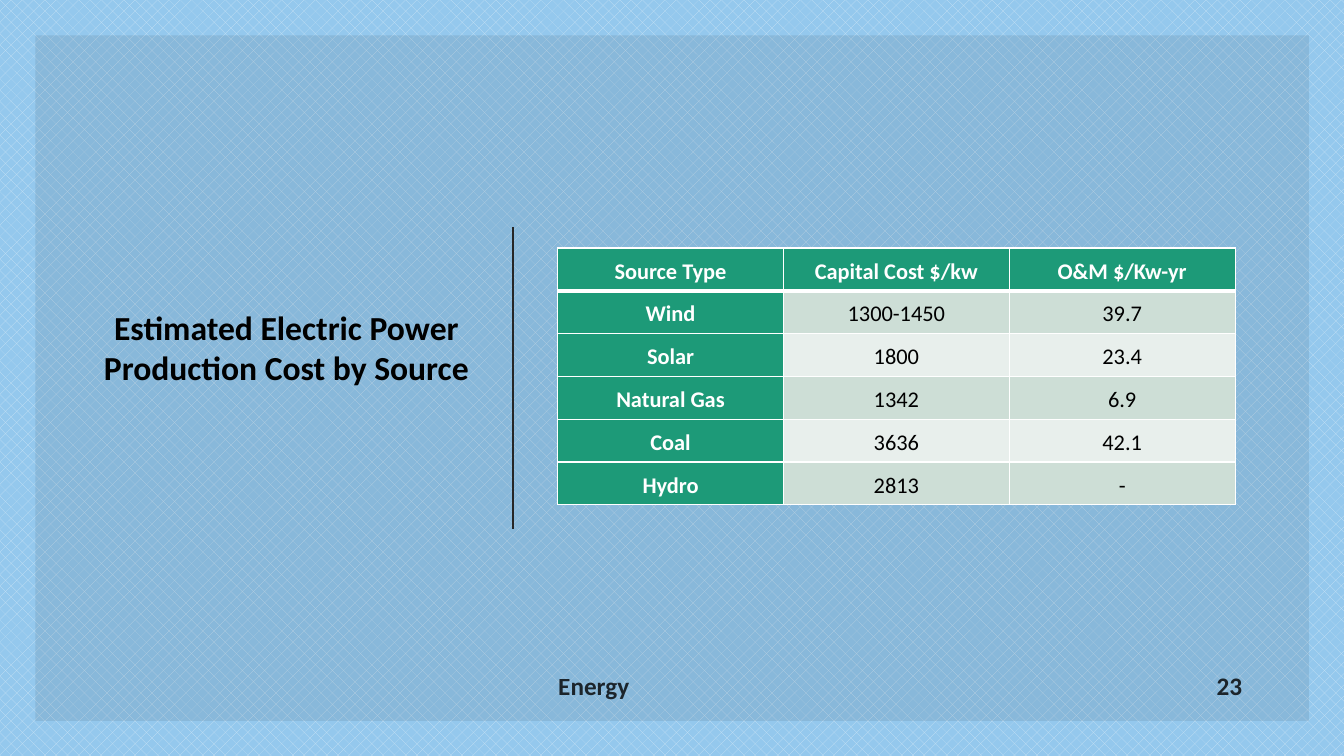
from dataclasses import dataclass

from lxml import etree
from pptx import Presentation
from pptx.dml.color import RGBColor
from pptx.enum.dml import MSO_PATTERN
from pptx.enum.shapes import MSO_CONNECTOR, MSO_SHAPE
from pptx.enum.text import MSO_ANCHOR, MSO_AUTO_SIZE, PP_ALIGN
from pptx.oxml.ns import qn
from pptx.util import Inches, Pt

LEFT, MID, RIGHT = PP_ALIGN.LEFT, PP_ALIGN.CENTER, PP_ALIGN.RIGHT
MIDDLE = MSO_ANCHOR.MIDDLE
GROW = MSO_AUTO_SIZE.SHAPE_TO_FIT_TEXT
RECT = MSO_SHAPE.RECTANGLE
STRAIGHT = MSO_CONNECTOR.STRAIGHT
DOTS = MSO_PATTERN.PERCENT_25
WIDE, HIGH = Inches(13.33), Inches(7.5)
COSTS = [
    ("Source Type", "Capital Cost $/kw", "O&M $/Kw-yr"),
    ("Wind", "1300-1450", "39.7"),
    ("Solar", "1800", "23.4"),
    ("Natural Gas", "1342", "6.9"),
    ("Coal", "3636", "42.1"),
    ("Hydro", "2813", "-"),
]


@dataclass(frozen=True)
class Theme:
    """Hold the colours, font and type sizes."""

    font: str = "Calibri"
    ink: str = "000000"
    pale: str = "FFFFFF"
    rule: str = "262626"
    head: str = "1D9A78"
    bands: tuple = ("E8EFEC", "CDDED6")
    dots: str = "CAE4F6"
    sky: str = "94C8ED"
    title: int = 24
    foot: int = 18
    cell: int = 16


LOOK = Theme()


def rgb(code):
    """Turn a hex code into a colour."""
    return RGBColor.from_string(code)


def span(x, y, w, h):
    """Turn percentages of the slide into lengths."""
    return [round(part * full / 100) for part, full in zip((x, y, w, h), (WIDE, HIGH) * 2)]


def put(thing, values):
    """Set attributes from a dict."""
    for name, value in values.items():
        setattr(thing, name, value)


def fade(fill, share):
    """Set the opacity of a solid fill in percent."""
    color = fill._xPr.find(qn("a:solidFill"))[0]
    etree.SubElement(color, qn("a:alpha"), val=str(share * 1000))


def write(frame, text, size, color, bold, align, **para):
    """Write one styled paragraph into a text frame."""
    frame.text = text
    line = frame.paragraphs[0]
    put(line, {"alignment": align, **para})
    font = line.runs[0].font
    put(font, {"name": LOOK.font, "size": Pt(size), "bold": bold})
    font.fill.solid()
    font.fill.fore_color.rgb = rgb(color)
    return font


def paint(slide):
    """Fill the background with its pattern."""
    fill = slide.background.fill
    fill.patterned()
    fill.pattern = DOTS
    fill.fore_color.rgb = rgb(LOOK.dots)
    fill.back_color.rgb = rgb(LOOK.sky)


def panel(slide, area):
    """Add the tinted panel."""
    shape = slide.shapes.add_shape(RECT, *area)
    shape.shadow.inherit = False
    shape.fill.solid()
    shape.fill.fore_color.rgb = rgb(LOOK.ink)
    fade(shape.fill, 8)
    shape.line.fill.background()


def rule(slide, x, top, end):
    """Add an upright line."""
    line = slide.shapes.add_connector(STRAIGHT, *span(x, top, x, end))
    line.line.color.rgb = rgb(LOOK.rule)
    line.line.width = Pt(1.5)
    etree.SubElement(line._element.spPr, qn("a:effectLst"))


def head(slide, text, area):
    """Place the title in front of the panel."""
    title = slide.shapes.title
    put(title, dict(zip(("left", "top", "width", "height"), area)))
    write(title.text_frame, text, LOOK.title, LOOK.ink, True, MID)
    put(title.text_frame, {"word_wrap": True, "vertical_anchor": MIDDLE, "auto_size": GROW})
    slide.shapes._spTree.append(title._element)


def foot(slide, text, area, align):
    """Add a footer text."""
    frame = slide.shapes.add_textbox(*area).text_frame
    put(frame, {"word_wrap": True, "vertical_anchor": MIDDLE})
    font = write(frame, text, LOOK.foot, LOOK.ink, True, align, space_after=Pt(6))
    fade(font.fill, 80)


def edge(cell, sides):
    """Draw the cell borders, given side and points."""
    props = cell._tc.get_or_add_tcPr()
    for spot, (side, width) in enumerate(sides.items()):
        line = etree.Element(qn("a:ln" + side), w=str(Pt(width)))
        fill = etree.SubElement(line, qn("a:solidFill"))
        etree.SubElement(fill, qn("a:srgbClr"), val=LOOK.pale)
        props.insert(spot, line)


def grid(slide, rows, area):
    """Add the cost table with its header row and column."""
    table = slide.shapes.add_table(len(rows), len(rows[0]), *area).table
    put(table, {"first_col": True, "horz_banding": False})
    for row in table.rows:
        row.height = area[3] // len(rows)
    pad = Inches(0.07)
    style = {"vertical_anchor": MIDDLE, "margin_left": pad, "margin_right": pad,
             "margin_top": 0, "margin_bottom": 0}
    for r, row in enumerate(rows):
        for c, text in enumerate(row):
            cell = table.cell(r, c)
            lead = r == 0 or c == 0
            put(cell, style)
            cell.fill.solid()
            cell.fill.fore_color.rgb = rgb(LOOK.head if lead else LOOK.bands[r % 2])
            color = LOOK.pale if lead else LOOK.ink
            write(cell.text_frame, text, LOOK.cell, color, lead, MID, line_spacing=1.15)
            edge(cell, {"L": 1, "R": 1, "T": 3 if r == 1 else 1, "B": 3 if r == 0 else 1})


def main():
    """Build and save the slide."""
    deck = Presentation()
    put(deck, {"slide_width": WIDE, "slide_height": HIGH})
    slide = deck.slides.add_slide(deck.slide_layouts[5])
    paint(slide)
    panel(slide, span(2.63, 4.67, 94.75, 90.67))
    rule(slide, 38.18, 30, 70)
    foot(slide, "Energy", span(40.8, 88, 43.14, 5.33), LEFT)
    foot(slide, "23", span(86.72, 88, 6.45, 5.33), RIGHT)
    head(slide, "Estimated Electric Power Production Cost by Source",
         span(6.83, 39.87, 28.96, 12.13))
    grid(slide, COSTS, span(41.49, 32.8, 50.41, 34))
    deck.save("out.pptx")


if __name__ == "__main__":
    main()
